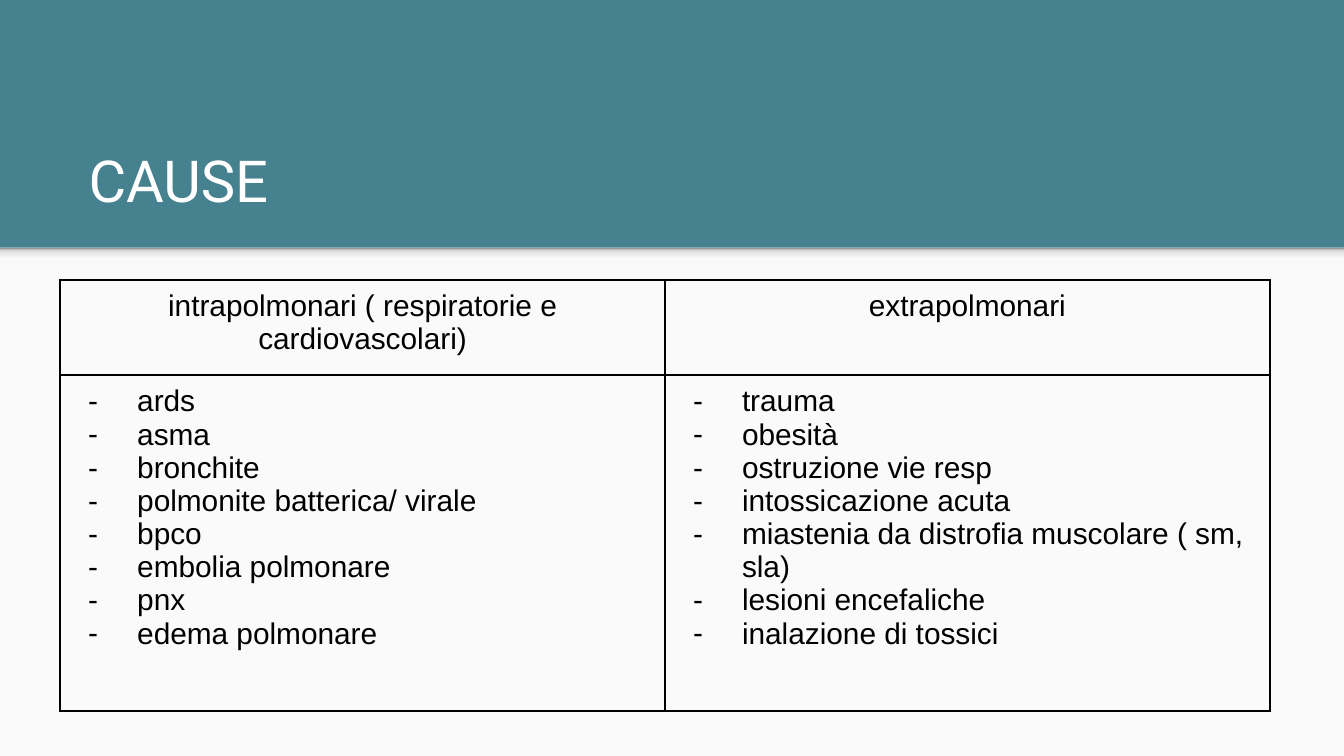
from copy import deepcopy
from dataclasses import dataclass
from lxml.etree import SubElement
from pptx import Presentation
from pptx.dml.color import RGBColor
from pptx.enum.shapes import MSO_SHAPE
from pptx.enum.text import MSO_ANCHOR, MSO_AUTO_SIZE, PP_ALIGN
from pptx.oxml import parse_xml
from pptx.oxml.ns import nsdecls, qn
from pptx.util import Pt


@dataclass
class Theme:
    teal: str = "45818E"
    pale: str = "FAFAFA"
    ink: str = "000000"
    white: str = "FFFFFF"
    fade: tuple = ((0, "F9F9F9"), (0.36, "F9F9F9"), (0.8, "DEDEDE"), (1, "999999"))
    head: int = 31
    text: int = 16


PX = 9525
theme = Theme()


def style(para, face, size, color):
    for run in para.runs:
        run.font.name = face
        run.font.size = Pt(size)
        run.font.color.rgb = RGBColor.from_string(color)


def block(top, high):
    shape = slide.shapes.add_shape(MSO_SHAPE.RECTANGLE, 0, top * PX, 960 * PX, high * PX)
    shape.shadow.inherit = False
    shape.line.fill.background()
    return shape


deck = Presentation()
deck.slide_width = 960 * PX
deck.slide_height = 540 * PX
slide = deck.slides.add_slide(deck.slide_layouts[5])
back = slide.background.fill
back.solid()
back.fore_color.rgb = RGBColor.from_string(theme.teal)

panel = block(177, 363)
panel.fill.solid()
panel.fill.fore_color.rgb = RGBColor.from_string(theme.pale)

shade = block(177, 12)
shade.fill.gradient()
shade.fill.gradient_angle = 90
stops = next(shade.element.iter(qn("a:gsLst")))
for stop in list(stops):
    stops.append(deepcopy(stop))
for stop, (place, color) in zip(shade.fill.gradient_stops, theme.fade):
    stop.position = place
    stop.color.rgb = RGBColor.from_string(color)

title = slide.shapes.title
title.left, title.top, title.width, title.height = [n * PX for n in (43, 82, 863, 81)]
slide.shapes._spTree.append(title.element)
frame = title.text_frame
frame.text = " CAUSE"
frame.word_wrap = True
frame.auto_size = MSO_AUTO_SIZE.NONE
frame.vertical_anchor = MSO_ANCHOR.BOTTOM
frame.margin_left = frame.margin_right = frame.margin_top = frame.margin_bottom = 10 * PX
frame.paragraphs[0].alignment = PP_ALIGN.LEFT
style(frame.paragraphs[0], "Roboto", theme.head, theme.white)

groups = {
    "intrapolmonari ( respiratorie e cardiovascolari)": [
        "ards", "asma", "bronchite", "polmonite batterica/ virale",
        "bpco", "embolia polmonare", "pnx", "edema polmonare",
    ],
    "extrapolmonari": [
        "trauma", "obesità", "ostruzione vie resp", "intossicazione acuta",
        "miastenia da distrofia muscolare ( sm, sla)",
        "lesioni encefaliche", "inalazione di tossici",
    ],
}
table = slide.shapes.add_table(2, 2, 43 * PX, 200 * PX, 864 * PX, 308 * PX).table
table.first_row = table.horz_banding = False
table.rows[0].height = 68 * PX
table.rows[1].height = 240 * PX

for col, (head, items) in enumerate(groups.items()):
    table.columns[col].width = 432 * PX
    for row, lines in enumerate(([head], items)):
        cell = table.cell(row, col)
        cell.text = "\n".join(lines)
        cell.margin_left = cell.margin_right = cell.margin_top = cell.margin_bottom = 7 * PX
        cell.fill.background()
        props = cell._tc.get_or_add_tcPr()
        for spot, side in enumerate("LRTB"):
            props.insert(spot, parse_xml(
                f'<a:ln{side} {nsdecls("a")} w="{Pt(1)}"><a:solidFill>'
                f'<a:srgbClr val="{theme.ink}"/></a:solidFill></a:ln{side}>'))
        for para in cell.text_frame.paragraphs:
            style(para, "Arial", theme.text, theme.ink)
            if row == 0:
                para.alignment = PP_ALIGN.CENTER
                continue
            form = para._p.get_or_add_pPr()
            form.set("marL", str(48 * PX))
            form.set("indent", str(-35 * PX))
            tint = SubElement(form, qn("a:buClr"))
            SubElement(tint, qn("a:srgbClr"), val=theme.ink)
            SubElement(form, qn("a:buFont"), typeface="Arial")
            SubElement(form, qn("a:buChar"), char="-")

deck.save("out.pptx")
